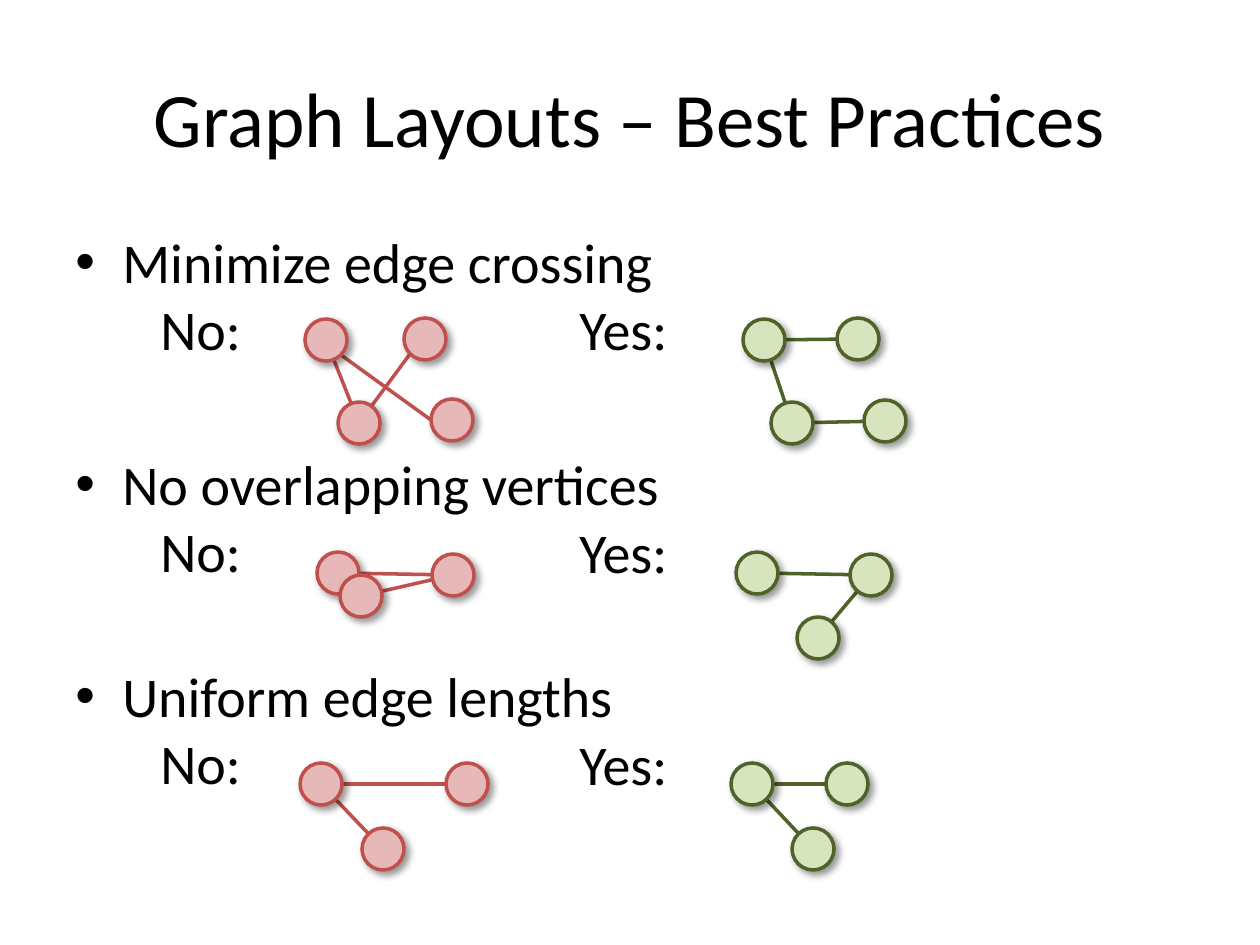
"""Build the slide on best practices for graph layouts."""
import pptx
import pptx.dml.color
import pptx.enum.shapes
import pptx.enum.text
import pptx.oxml.ns
import pptx.util
from lxml import etree

TITLE = "Graph Layouts – Best Practices"

PRACTICES = [
    {
        "rule": "Minimize edge crossing",
        "gap": 0,
        "yes_top": 288,
        "bad": {
            "vertices": {"a": (326, 340), "b": (425, 339), "c": (359, 423), "d": (452, 420)},
            "edges": [("a", "c"), ("b:sw", "c"), ("a:se", "d:w")],
        },
        "good": {
            "vertices": {"a": (764, 340), "b": (858, 339), "c": (792, 423), "d": (885, 421)},
            "edges": [("a", "b"), ("a", "c"), ("c", "d")],
        },
    },
    {
        "rule": "No overlapping vertices",
        "gap": 88,
        "yes_top": 511,
        "bad": {
            "vertices": {"a": (338, 573), "b": (453, 575), "c": (361, 596)},
            "edges": [("a", "b"), ("c", "b")],
        },
        "good": {
            "vertices": {"a": (757, 573), "b": (871, 575), "c": (818, 638)},
            "edges": [("a", "b"), ("c", "b")],
        },
    },
    {
        "rule": "Uniform edge lengths",
        "gap": 77,
        "yes_top": 723,
        "bad": {
            "vertices": {"a": (321, 784), "b": (467, 784), "c": (383, 849)},
            "edges": [("a", "b"), ("a", "c")],
        },
        "good": {
            "vertices": {"a": (752, 784), "b": (847, 784), "c": (813, 849)},
            "edges": [("a", "b"), ("a", "c")],
        },
    },
]

THEME = {
    "font": "Calibri",
    "text": "000000",
    "title_pt": 44,
    "body_pt": 32,
    "line_pt": 2,
    "bad": {"fill": "E6B9B8", "line": "C0504D"},
    "good": {"fill": "D7E4BD", "line": "4F6228"},
}

SLIDE_SIZE = (1260, 945)
TITLE_BOX = (63, 38, 1134, 158)
BODY_BOX = (63, 221, 1134, 624)
RULE_INDENT = 47
LABEL_INDENT = 85
YES_LEFT = 567
YES_SIZE = (126, 80)
VERTEX_SIZE = 42
SITES = {"": (0, 0), "w": (-21, 0), "sw": (-15, 15), "se": (15, 15)}


def px(length):
    return pptx.util.Emu(round(length * 914400 / 126))


def rgb(code):
    return pptx.dml.color.RGBColor.from_string(code)


def add_child(parent, tag, **attributes):
    return etree.SubElement(parent, pptx.oxml.ns.qn(tag), attributes)


def add_run(paragraph, text, size):
    run = paragraph.add_run()
    run.text = text
    run.font.name = THEME["font"]
    run.font.size = pptx.util.Pt(size)
    run.font.color.rgb = rgb(THEME["text"])


def set_indent(paragraph, margin, first_line):
    paragraph_format = paragraph._p.get_or_add_pPr()
    paragraph_format.set("marL", str(px(margin)))
    paragraph_format.set("indent", str(px(first_line)))
    return paragraph_format


def set_outline(line, colour):
    line.color.rgb = rgb(colour)
    line.width = pptx.util.Pt(THEME["line_pt"])


def add_text_frame(slide, box):
    frame = slide.shapes.add_textbox(*map(px, box)).text_frame
    frame.word_wrap = True
    return frame


def add_title(slide):
    title = slide.shapes.title
    title.left, title.top, title.width, title.height = map(px, TITLE_BOX)
    title.text_frame.vertical_anchor = pptx.enum.text.MSO_ANCHOR.MIDDLE
    heading = title.text_frame.paragraphs[0]
    heading.alignment = pptx.enum.text.PP_ALIGN.CENTER
    add_run(heading, TITLE, THEME["title_pt"])


def add_practices(slide):
    body = add_text_frame(slide, BODY_BOX)
    for index, practice in enumerate(PRACTICES):
        rule = body.add_paragraph() if index else body.paragraphs[0]
        rule.space_before = px(practice["gap"])
        add_run(rule, practice["rule"], THEME["body_pt"])
        rule_format = set_indent(rule, RULE_INDENT, -RULE_INDENT)
        add_child(rule_format, "a:buFont", typeface="Arial")
        add_child(rule_format, "a:buChar", char="•")

        no_label = body.add_paragraph()
        add_run(no_label, "No:", THEME["body_pt"])
        add_child(set_indent(no_label, LABEL_INDENT, 0), "a:buNone")

        yes_label = add_text_frame(slide, (YES_LEFT, practice["yes_top"], *YES_SIZE))
        add_run(yes_label.paragraphs[0], "Yes:", THEME["body_pt"])


def edge_end(vertices, end):
    name, _, site = end.partition(":")
    return [px(centre + shift) for centre, shift in zip(vertices[name], SITES[site])]


def add_graph(slide, graph, colours):
    vertices = graph["vertices"]
    for start, finish in graph["edges"]:
        edge = slide.shapes.add_connector(
            pptx.enum.shapes.MSO_CONNECTOR.STRAIGHT,
            *edge_end(vertices, start),
            *edge_end(vertices, finish),
        )
        set_outline(edge.line, colours["line"])
        add_child(edge._element.spPr, "a:effectLst")

    for x, y in vertices.values():
        vertex = slide.shapes.add_shape(
            pptx.enum.shapes.MSO_SHAPE.OVAL,
            px(x - VERTEX_SIZE / 2),
            px(y - VERTEX_SIZE / 2),
            px(VERTEX_SIZE),
            px(VERTEX_SIZE),
        )
        vertex.fill.solid()
        vertex.fill.fore_color.rgb = rgb(colours["fill"])
        set_outline(vertex.line, colours["line"])
        vertex.shadow.inherit = False
        effects = vertex._element.spPr.find(pptx.oxml.ns.qn("a:effectLst"))
        shadow = add_child(
            effects, "a:outerShdw", blurRad="50800", dist="38100", dir="2700000", algn="tl"
        )
        shade = add_child(shadow, "a:srgbClr", val=THEME["text"])
        add_child(shade, "a:alpha", val="40000")


def main():
    deck = pptx.Presentation()
    deck.slide_width, deck.slide_height = map(px, SLIDE_SIZE)
    slide = deck.slides.add_slide(deck.slide_layouts.get_by_name("Title Only"))
    add_title(slide)
    add_practices(slide)
    for practice in PRACTICES:
        for verdict in ("bad", "good"):
            add_graph(slide, practice[verdict], THEME[verdict])
    deck.save("out.pptx")


if __name__ == "__main__":
    main()
